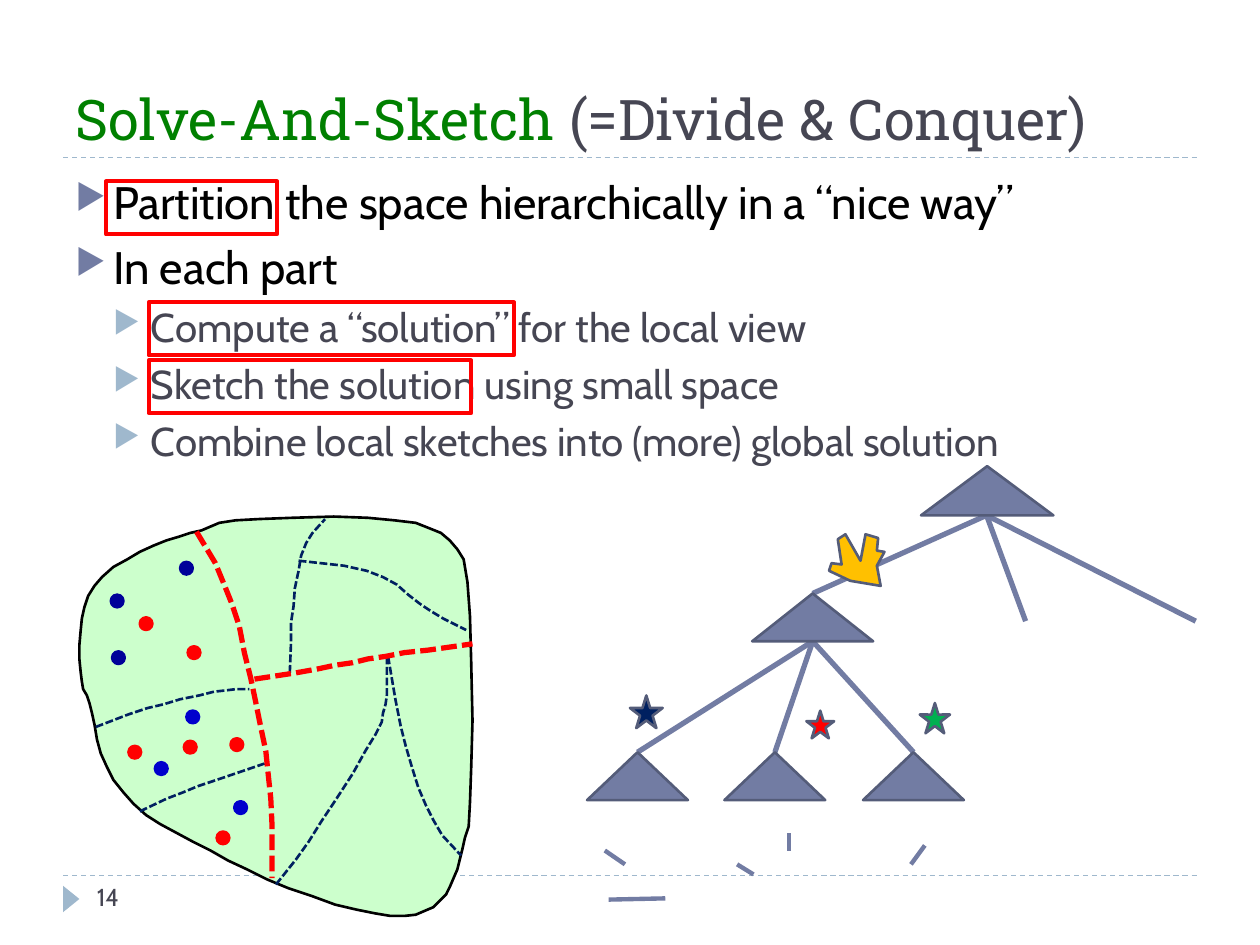
from collections import namedtuple
from lxml.etree import SubElement
from pptx import Presentation
from pptx.dml.color import RGBColor
from pptx.enum.dml import MSO_LINE
from pptx.enum.shapes import MSO_CONNECTOR, MSO_SHAPE
from pptx.enum.text import MSO_ANCHOR
from pptx.oxml.ns import qn
from pptx.util import Pt

PX = 9144
WIDE, HIGH, EDGE = 1000, 750, 50
RED, GREEN, NAVY, BLACK, GOLD = "FF0000", "00B050", "002060", "000000", "FFC000"
SLATE, RIM, PALE, INK, GRASS = "727CA3", "545C79", "9FB8CD", "464653", "CCFFCC"
DEEP, BLUE = "000099", "0000CC"

Node = namedtuple("Node", "mid top wide high")
Level = namedtuple("Level", "left gap mark code size")

TITLE = {"size": Pt(32), "name": "Roboto Slab"}
LEVELS = [Level(30, 6, SLATE, BLACK, 26), Level(60, 5, PALE, INK, 23)]
BODY = [(0, "Partition the space hierarchically in a “nice way”"),
        (0, "In each part"),
        (1, "Compute a “solution” for the local view"),
        (1, "Sketch the solution using small space"),
        (1, "Combine local sketches into (more) global solution")]
MARKS = {"partition": (84, 144, 136), "compute": (118, 240, 290), "sketch": (118, 286, 256)}

SHORE = [(157, 422), (117, 433), (74, 461), (63, 494), (63, 541), (72, 558), (80, 604),
         (108, 644), (159, 671), (218, 702), (295, 727), (336, 727), (357, 708),
         (366, 679), (375, 642), (374, 456), (357, 424), (313, 410), (184, 411)]
MAJOR = {"spine": [(156, 422), (182, 467), (202, 548), (216, 625), (216, 697)],
         "branch": [(202, 539), (260, 530), (312, 519), (375, 511)]}
MINOR = {"west": [(76, 577), (122, 560), (179, 547), (198, 547)],
         "southwest": [(111, 644), (148, 627), (210, 606)],
         "north": [(230, 534), (231, 489), (240, 431), (258, 412)],
         "northeast": [(237, 445), (301, 452), (338, 484), (370, 500)],
         "south": [(219, 702), (247, 666), (300, 582), (307, 557), (307, 521)],
         "southeast": [(308, 521), (319, 584), (340, 650), (366, 679)]}
DOTS = {"upper": {RED: [(116, 495), (154, 518)], DEEP: [(148, 451), (93, 477), (94, 522)]},
        "middle": {RED: [(151, 593), (107, 597), (188, 591)], BLUE: [(153, 569), (128, 610)]},
        "lower": {RED: [(177, 665)], BLUE: [(191, 641)]}}

ROOT = Node(783, 370, 105, 39)
CHILD = Node(645, 471, 96, 38)
LEAVES = [Node(506 + 219 * i // 2, 597, 80, 38) for i in range(3)]
STUBS = [(814, 493), (949, 493)]
TICKS = {"rung": (528, 713, 483, 714), "left": (480, 675, 496, 686),
         "slant": (598, 694, 585, 686), "post": (626, 675, 626, 661),
         "right": (723, 686, 734, 671)}
STARS = {NAVY: (513, 565, 26), RED: (651, 575, 22), GREEN: (742, 570, 24)}
CROWN = [(658, 453), (660, 447), (668, 448), (665, 428), (671, 424), (683, 445), (687, 424),
         (697, 427), (696, 437), (702, 438), (696, 449), (699, 465), (675, 461)]


def tint(code):
    """Turn a hex string into a colour."""
    return RGBColor.from_string(code)


def put(item, vals):
    """Set each named value on the item."""
    for name, val in vals.items():
        setattr(item, name, val)


def ink(line, code, width, dash=None):
    """Set colour, width and dash of a line."""
    line.color.rgb = tint(code)
    put(line, {"width": Pt(width), "dash_style": dash})


def dress(shape, fill, edge, width, dash=None):
    """Give a shape its fill and outline, with no shadow."""
    shape.shadow.inherit = False
    if fill:
        shape.fill.solid()
        shape.fill.fore_color.rgb = tint(fill)
    else:
        shape.fill.background()
    if edge:
        ink(shape.line, edge, width, dash)
    else:
        shape.line.fill.background()


def form(slide, kind, box, fill=None, edge=None, width=1.5):
    """Add a preset shape in a box."""
    shape = slide.shapes.add_shape(kind, *[n * PX for n in box])
    dress(shape, fill, edge, width)
    return shape


def badge(slide, kind, spot, size, fill, edge):
    """Add a small preset shape centred on a spot."""
    x, y = spot
    form(slide, kind, (x - size // 2, y - size // 2, size, size), fill, edge)


def round_off(points, closed):
    """Cut every corner at a quarter and keep the ends of an open path."""
    ring = points + points[:1] if closed else points
    cut = [tuple((w * m + (4 - w) * n) / 4 for m, n in zip(a, b))
           for a, b in zip(ring, ring[1:]) for w in (3, 1)]
    return cut if closed else [points[0]] + cut[1:-1] + [points[-1]]


def trace(slide, points, fill, edge, width, dash=None, rounds=2):
    """Add a softened outline, closed when it has a fill."""
    for _ in range(rounds):
        points = round_off(points, bool(fill))
    pen = slide.shapes.build_freeform(*points[0], scale=PX)
    pen.add_line_segments(points[1:], close=bool(fill))
    dress(pen.convert_to_shape(), fill, edge, width, dash)


def link(slide, ends, code, width, dash=None):
    """Add a straight line."""
    line = slide.shapes.add_connector(MSO_CONNECTOR.STRAIGHT, *[n * PX for n in ends])
    ink(line.line, code, width, dash)
    SubElement(line._element.spPr, qn("a:effectLst"))


def field(slide, box, anchor=MSO_ANCHOR.TOP):
    """Add a wrapping text box and return its frame."""
    frame = slide.shapes.add_textbox(*[n * PX for n in box]).text_frame
    put(frame, {"word_wrap": True, "vertical_anchor": anchor})
    return frame


def write(para, text, code, style):
    """Add a run of styled text."""
    run = para.add_run()
    run.text = text
    put(run.font, style)
    run.font.color.rgb = tint(code)


def point(para, left, code):
    """Give a paragraph its hanging arrow bullet."""
    props = para._p.get_or_add_pPr()
    props.set("marL", str(left * PX))
    props.set("indent", str(-30 * PX))
    SubElement(SubElement(props, qn("a:buClr")), qn("a:srgbClr"), val=code)
    SubElement(props, qn("a:buSzPct"), val="76000")
    SubElement(props, qn("a:buChar"), char="▶")


def base(slide):
    """Draw the two rules and the page number with its arrow."""
    for y in (695, 125):
        link(slide, (EDGE, y, WIDE - EDGE, y), PALE, 0.75, MSO_LINE.DASH)
    form(slide, MSO_SHAPE.ISOSCELES_TRIANGLE, (46, 707, 21, 13), PALE).rotation = 90
    page = field(slide, (67, 695, 217, 40)).paragraphs[0]
    write(page, "14", INK, {"size": Pt(14), "name": "Cabin"})


def prose(slide):
    """Add the title and the bullets."""
    span = WIDE - 2 * EDGE
    head = field(slide, (EDGE, 17, span, 108), MSO_ANCHOR.BOTTOM).paragraphs[0]
    write(head, "Solve-And-Sketch", "008000", TITLE)
    write(head, " (=Divide & Conquer)", INK, TITLE)
    frame = field(slide, (EDGE, 133, span, 540))
    for i, (depth, text) in enumerate(BODY):
        para = frame.add_paragraph() if i else frame.paragraphs[0]
        level = LEVELS[depth]
        put(para, {"level": depth, "space_before": Pt(level.gap)})
        point(para, level.left, level.mark)
        write(para, text, level.code, {"size": Pt(level.size), "name": "Cabin"})


def land(slide):
    """Draw the space, its borders and its dots."""
    trace(slide, SHORE, GRASS, BLACK, 1.5)
    for borders, code, width in ((MINOR, NAVY, 1.5), (MAJOR, RED, 3)):
        for points in borders.values():
            trace(slide, points, None, code, width, MSO_LINE.SQUARE_DOT)
    for part in DOTS.values():
        for code, spots in part.items():
            for spot in spots:
                badge(slide, MSO_SHAPE.OVAL, spot, 10, code, code)


def fan(slide, node, tips):
    """Draw lines from the base of a node to each tip."""
    for tip in tips:
        link(slide, (node.mid, node.top + node.high, *tip), SLATE, 3)


def tree(slide):
    """Draw the tree with its ticks, stars and crown."""
    fan(slide, ROOT, [CHILD[:2]] + STUBS)
    fan(slide, CHILD, [leaf[:2] for leaf in LEAVES])
    for node in [ROOT, CHILD] + LEAVES:
        box = (node.mid - node.wide // 2, *node[1:])
        form(slide, MSO_SHAPE.ISOSCELES_TRIANGLE, box, SLATE, RIM)
    for ends in TICKS.values():
        link(slide, ends, SLATE, 2.5)
    for code, (x, y, size) in STARS.items():
        badge(slide, MSO_SHAPE.STAR_5_POINT, (x, y), size, code, RIM)
    trace(slide, CROWN, GOLD, RIM, 1.5, rounds=0)


def main():
    """Build the slide and save it."""
    deck = Presentation()
    put(deck, {"slide_width": WIDE * PX, "slide_height": HIGH * PX})
    slide = deck.slides.add_slide(deck.slide_layouts[6])
    for draw in (base, prose, land, tree):
        draw(slide)
    for spot in MARKS.values():
        form(slide, MSO_SHAPE.RECTANGLE, (*spot, 42), None, RED, 2.25)
    deck.save("out.pptx")


if __name__ == "__main__":
    main()
